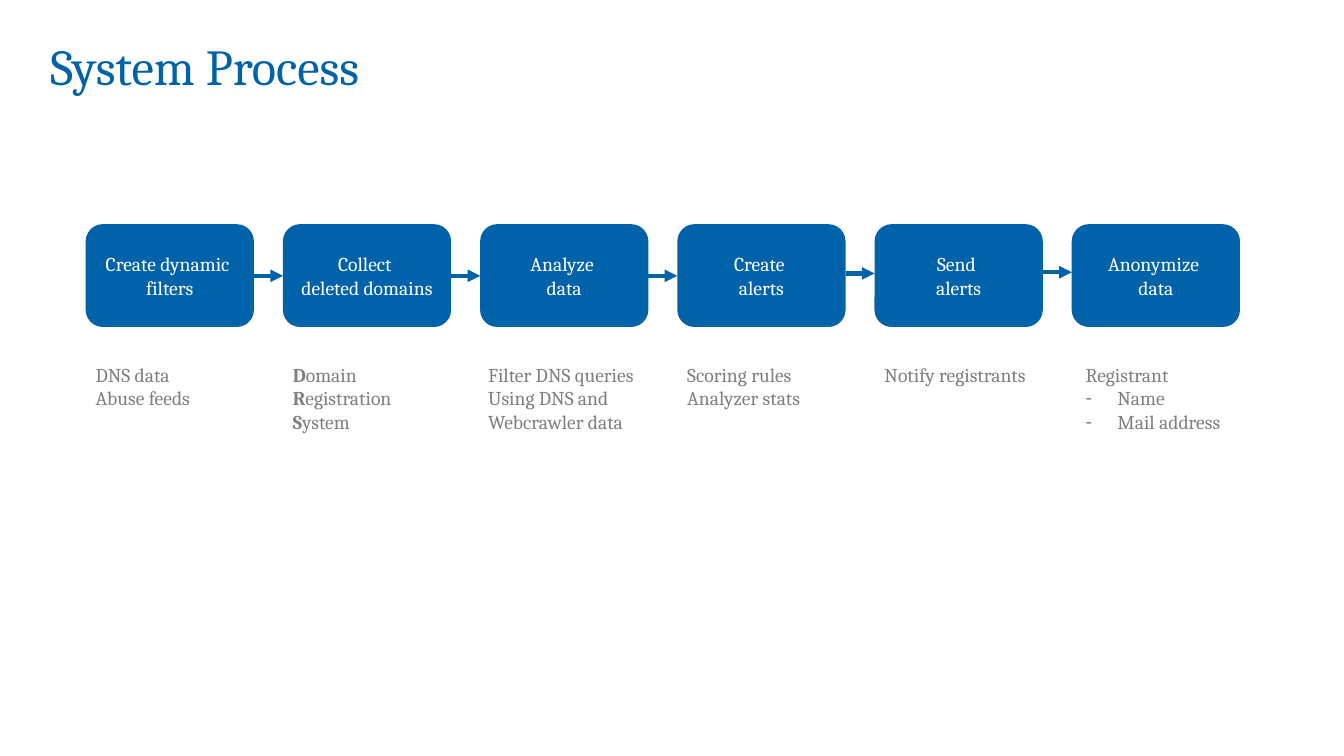
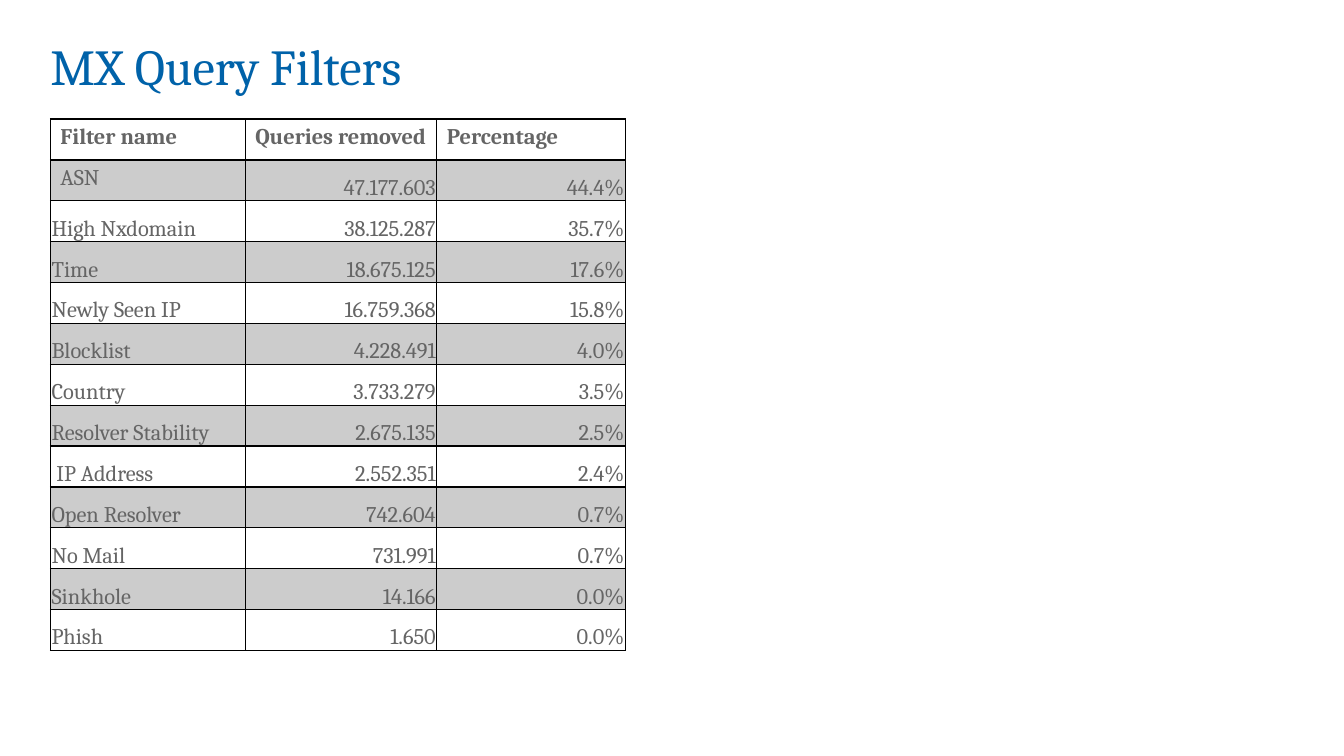
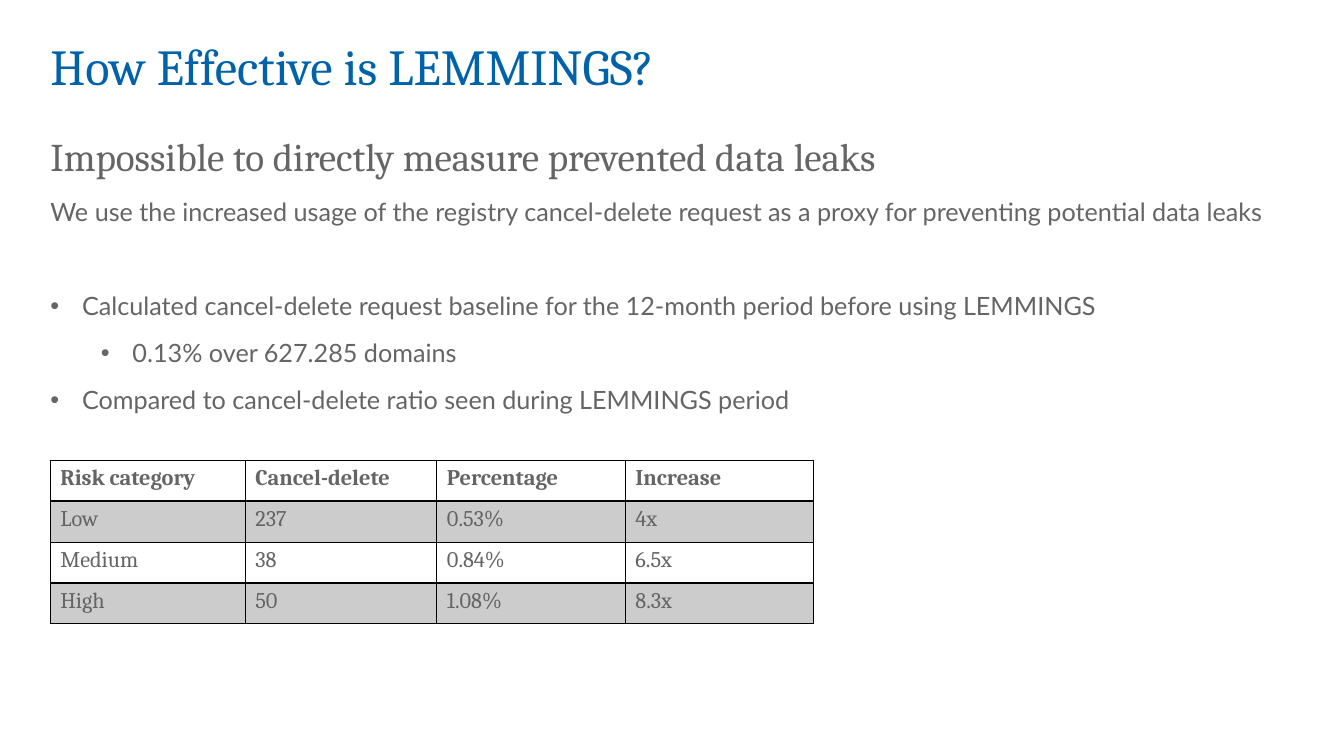
from lxml import etree
from pptx import Presentation
from pptx.dml.color import RGBColor
from pptx.enum.shapes import MSO_CONNECTOR, MSO_SHAPE
from pptx.enum.text import MSO_ANCHOR, MSO_AUTO_SIZE, PP_ALIGN
from pptx.oxml.ns import qn
from pptx.util import Cm, Pt

LEFT, CENTER, RIGHT = PP_ALIGN.LEFT, PP_ALIGN.CENTER, PP_ALIGN.RIGHT
TOP, MIDDLE, BOTTOM = MSO_ANCHOR.TOP, MSO_ANCHOR.MIDDLE, MSO_ANCHOR.BOTTOM
NO_AUTOFIT = MSO_AUTO_SIZE.NONE
ROUNDED = MSO_SHAPE.ROUNDED_RECTANGLE
STRAIGHT = MSO_CONNECTOR.STRAIGHT
TITLE_ONLY = 5

BLUE, GRAY, NOTE_GRAY = "0062A9", "656565", "808080"
WHITE, BLACK, BAND = "FFFFFF", "000000", "CCCCCC"
SERIF, SANS = "Cambria", "Lato"
MARGIN = 1.27
CONTENT_WIDTH = 31.32
COLUMN_WIDTHS = (4.91, 4.83, 4.75, 4.75)
ROW_HEIGHT = 1.03
HANGING = 0.8


def color(value):
    return RGBColor.from_string(value)


def add_bullet(paragraph, character, indent):
    properties = paragraph._p.get_or_add_pPr()
    properties.set("marL", str(Cm(indent)))
    properties.set("indent", str(-Cm(HANGING)))
    etree.SubElement(properties, qn("a:buFont"), typeface="Arial")
    etree.SubElement(properties, qn("a:buChar"), char=character)


def write(frame, text, size=14, font=SERIF, fill=GRAY, bold=False, align=LEFT,
          before=0, after=0, spacing=None, bullet=None, indent=HANGING,
          bold_initial=False):
    paragraph = frame.add_paragraph() if frame.text else frame.paragraphs[0]
    paragraph.alignment = align
    paragraph.space_before = Pt(before)
    paragraph.space_after = Pt(after)
    if spacing:
        paragraph.line_spacing = spacing
    if bullet:
        add_bullet(paragraph, bullet, indent)
    paragraph.font.size = Pt(size)
    parts = [(text[0], True), (text[1:], False)] if bold_initial else [(text, bold)]
    for part, is_bold in parts:
        run = paragraph.add_run()
        run.text = part
        run.font.name = font
        run.font.size = Pt(size)
        run.font.bold = is_bold
        run.font.color.rgb = color(fill)


def set_margins(target, left, top, right, bottom):
    target.margin_left, target.margin_top = Cm(left), Cm(top)
    target.margin_right, target.margin_bottom = Cm(right), Cm(bottom)


def set_borders(cell, bottom):
    properties = cell._tc.get_or_add_tcPr()
    for side, width in (("L", 1), ("R", 1), ("T", 1), ("B", bottom)):
        line = etree.SubElement(properties, qn(f"a:ln{side}"), w=str(Pt(width)))
        solid = etree.SubElement(line, qn("a:solidFill"))
        etree.SubElement(solid, qn("a:srgbClr"), val=BLACK)


class Deck:
    def __init__(self):
        self.presentation = Presentation()
        self.presentation.slide_width = Cm(33.87)
        self.presentation.slide_height = Cm(19.05)
        self.slide = None

    def add_slide(self, title):
        layout = self.presentation.slide_layouts[TITLE_ONLY]
        self.slide = self.presentation.slides.add_slide(layout)
        shape = self.slide.shapes.title
        shape.left, shape.top = Cm(MARGIN), Cm(1.04)
        shape.width, shape.height = Cm(CONTENT_WIDTH), Cm(1.4)
        frame = shape.text_frame
        frame.auto_size = NO_AUTOFIT
        frame.vertical_anchor = MIDDLE
        set_margins(frame, 0, 0.3, 0.3, 0.3)
        write(frame, title, size=36, fill=BLUE, spacing=0.9)

    def add_box(self, left, top, width, height, lines):
        shape = self.slide.shapes.add_shape(
            ROUNDED, Cm(left), Cm(top), Cm(width), Cm(height))
        shape.shadow.inherit = False
        shape.fill.solid()
        shape.fill.fore_color.rgb = color(BLUE)
        shape.line.fill.background()
        shape.text_frame.vertical_anchor = MIDDLE
        for line in lines:
            write(shape.text_frame, line, fill=WHITE, align=CENTER)

    def add_arrow(self, left, right, y):
        connector = self.slide.shapes.add_connector(
            STRAIGHT, Cm(left), Cm(y), Cm(right), Cm(y))
        connector.line.color.rgb = color(BLUE)
        connector.line.width = Pt(3)
        properties = connector._element.spPr
        etree.SubElement(properties.find(qn("a:ln")), qn("a:tailEnd"), type="triangle")
        etree.SubElement(properties, qn("a:effectLst"))

    def add_text(self, left, top, width, height):
        shape = self.slide.shapes.add_textbox(
            Cm(left), Cm(top), Cm(width), Cm(height))
        shape.text_frame.word_wrap = True
        return shape.text_frame

    def add_table(self, top, rows, numeric=False):
        widths = COLUMN_WIDTHS[:len(rows[0])]
        table = self.slide.shapes.add_table(
            len(rows), len(widths), Cm(MARGIN), Cm(top),
            Cm(sum(widths)), Cm(ROW_HEIGHT * len(rows))).table
        table.first_row = table.horz_banding = False
        for column, width in zip(table.columns, widths):
            column.width = Cm(width)
        for row_index, values in enumerate(rows):
            table.rows[row_index].height = Cm(ROW_HEIGHT)
            for column_index, value in enumerate(values):
                cell = table.cell(row_index, column_index)
                header = row_index == 0
                tight = numeric and not header and (row_index, column_index) != (1, 0)
                set_borders(cell, bottom=2 if header else 1)
                if row_index % 2:
                    cell.fill.solid()
                    cell.fill.fore_color.rgb = color(BAND)
                else:
                    cell.fill.background()
                if tight:
                    set_margins(cell, 0.03, 0.03, 0.03, 0)
                cell.vertical_anchor = BOTTOM if tight else TOP
                write(cell.text_frame, value, size=16, bold=header,
                      align=RIGHT if tight and column_index else LEFT)


def build_process(deck):
    deck.add_slide("System Process")
    first_left, top, width, height, pitch = 2.16, 5.65, 4.24, 2.59, 4.97
    steps = [
        (("Create dynamic ", "filters"), 0, ("DNS data", "Abuse feeds")),
        (("Collect ", "deleted domains"), 0, ("Domain", "Registration", "System")),
        (("Analyze ", "data"), -0.05,
         ("Filter DNS queries", "Using DNS and", "Webcrawler data")),
        (("Create ", "alerts"), 0, ("Scoring rules", "Analyzer stats")),
        (("Send ", "alerts"), 0, ("Notify registrants",)),
        (("Anonymize ", "data"), 0.1, ("Registrant", "Name", "Mail address")),
    ]
    for index, (label, shift, notes) in enumerate(steps):
        left = first_left + index * pitch
        deck.add_box(left, top, width, height, label)
        frame = deck.add_text(left + shift, 9.01, pitch, 2.06)
        for line in notes:
            write(frame, line, fill=NOTE_GRAY,
                  bold_initial=notes[0] == "Domain",
                  bullet="-" if line in ("Name", "Mail address") else None)
    for index, y in enumerate((6.95, 6.95, 6.95, 6.89, 6.86)):
        left = first_left + index * pitch
        deck.add_arrow(left + width, left + pitch, y)


def build_filters(deck):
    deck.add_slide("MX Query Filters")
    deck.add_table(3, [
        ("Filter name", "Queries removed", "Percentage"),
        ("ASN", "47.177.603", "44.4%"),
        ("High Nxdomain", "38.125.287", "35.7%"),
        ("Time", "18.675.125", "17.6%"),
        ("Newly Seen IP", "16.759.368", "15.8%"),
        ("Blocklist", "4.228.491", "4.0%"),
        ("Country", "3.733.279", "3.5%"),
        ("Resolver Stability", "2.675.135", "2.5%"),
        (" IP Address", "2.552.351", "2.4%"),
        ("Open Resolver", "742.604", "0.7%"),
        ("No Mail", "731.991", "0.7%"),
        ("Sinkhole", "14.166", "0.0%"),
        ("Phish", "1.650", "0.0%"),
    ], numeric=True)


def build_effectiveness(deck):
    deck.add_slide("How Effective is LEMMINGS?")
    frame = deck.add_text(MARGIN, 3.04, CONTENT_WIDTH, 8.3)
    set_margins(frame, 0, 0.3, 0.3, 0.3)
    write(frame, "Impossible to directly measure prevented data leaks",
          size=28, after=6)
    body = {"size": 18, "font": SANS, "after": 6}
    write(frame, "We use the increased usage of the registry cancel-delete request "
          "as a proxy for preventing potential data leaks", before=6, **body)
    for text, before, indent in (
            ("Calculated cancel-delete request baseline for the 12-month period "
             "before using LEMMINGS", 39.6, HANGING),
            ("0.13% over 627.285 domains", 6, 2.07),
            ("Compared to cancel-delete ratio seen during LEMMINGS period", 6, HANGING)):
        write(frame, text, before=before, bullet="•", indent=indent, **body)
    deck.add_table(11.6, [
        ("Risk category", "Cancel-delete", "Percentage", "Increase"),
        ("Low", "237", "0.53%", "4x"),
        ("Medium", "38", "0.84%", "6.5x"),
        ("High", "50", "1.08%", "8.3x"),
    ])


def main():
    deck = Deck()
    build_process(deck)
    build_filters(deck)
    build_effectiveness(deck)
    deck.presentation.save("out.pptx")


if __name__ == "__main__":
    main()
